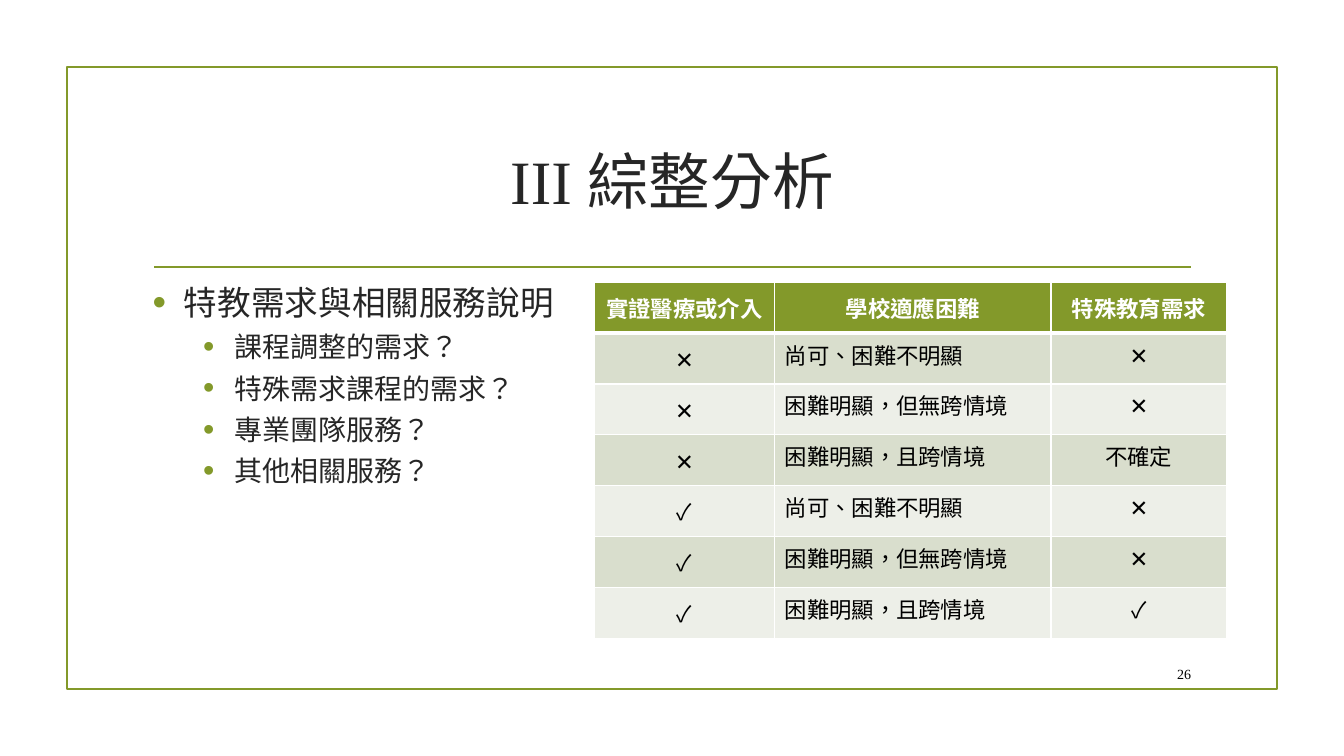
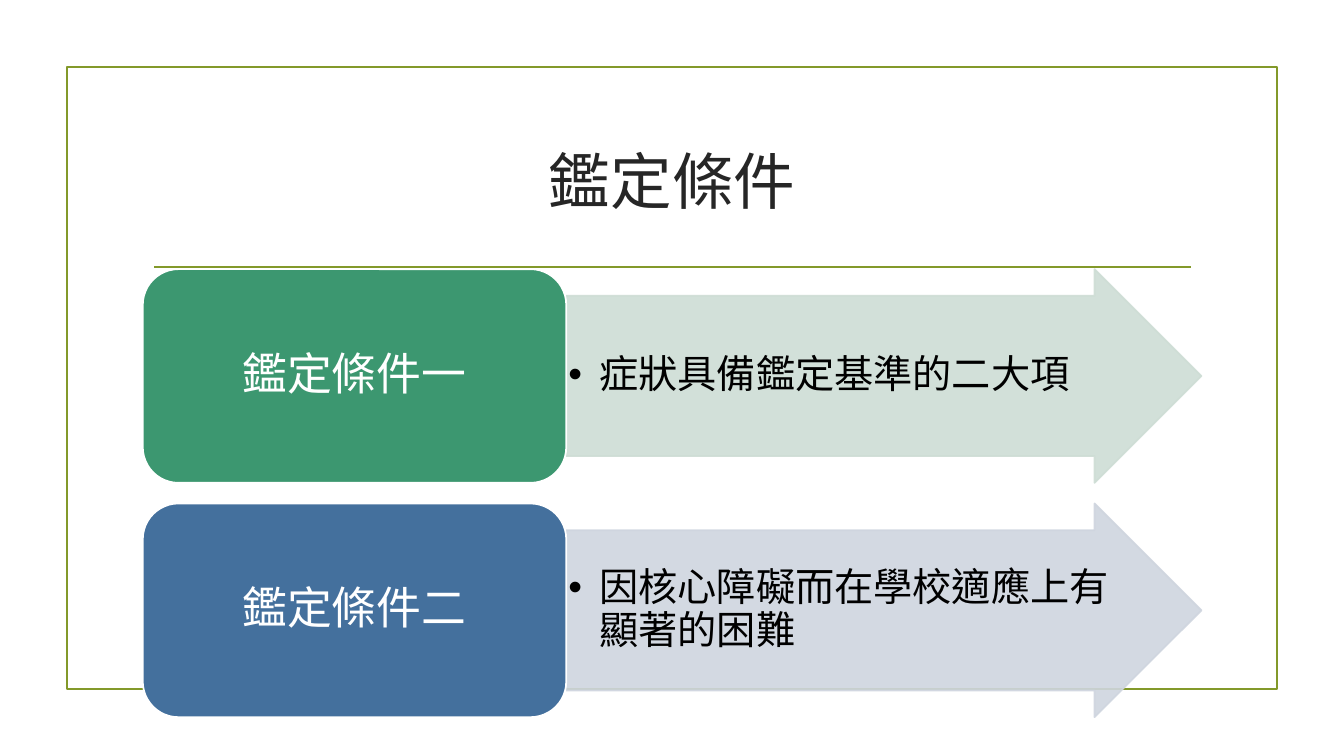
from dataclasses import dataclass

from lxml import etree
from pptx import Presentation, util as u
from pptx.dml.color import RGBColor
from pptx.enum import shapes, text
from pptx.oxml import ns

# Colours and fonts
GREEN = RGBColor(0x83, 0x99, 0x2A)
INK = RGBColor(0x26, 0x26, 0x26)
BLACK = RGBColor(0, 0, 0)
WHITE = RGBColor(0xFF, 0xFF, 0xFF)
BAND_DARK = RGBColor(0xD9, 0xDE, 0xCD)
BAND_LIGHT = RGBColor(0xED, 0xEF, 0xE8)
TEAL = RGBColor(0x3C, 0x97, 0x70)
TEAL_PALE = RGBColor(0xCE, 0xDD, 0xD5)
BLUE = RGBColor(0x44, 0x70, 0x9D)
BLUE_PALE = RGBColor(0xCF, 0xD5, 0xDF)
SERIF = "Times New Roman"
SANS = "Noto Sans CJK TC"
LINE_WIDTH = 1.25
LEFT, CENTER, RIGHT = text.PP_ALIGN.LEFT, text.PP_ALIGN.CENTER, text.PP_ALIGN.RIGHT
TOP, MIDDLE = text.MSO_ANCHOR.TOP, text.MSO_ANCHOR.MIDDLE

# The slide is a grid of 160 columns by 90 rows of equal squares
SLIDE_W, SLIDE_H = u.Inches(13.33), u.Inches(7.5)
UNIT = SLIDE_H / 90


def grid(cells: float) -> int:
    return round(cells * UNIT)


@dataclass(frozen=True)
class Box:
    left: float
    top: float
    width: float
    height: float

    def emu(self) -> tuple:
        return tuple(map(grid, (self.left, self.top, self.width, self.height)))


@dataclass(frozen=True)
class Need:
    label: str
    level: int = 0


@dataclass(frozen=True)
class Condition:
    label: str
    detail: str
    fill: RGBColor
    pale: RGBColor


FRAME = Box(8, 8, 144, 74)
TITLE = Box(17, 12.84, 126, 17.16)
RULE_LEFT, RULE_RIGHT, RULE_TOP = 18.36, 141.72, 31.8
NEEDS_BOX = Box(17, 33.6, 52.5, 43.6)
PAGE_NUMBER = Box(135.84, 78.4, 7.1, 3.7)
TABLE_LEFT, TABLE_TOP, TABLE_HEIGHT = 70.7, 33.6, 42.4
TABLE_COLUMNS = (21.5, 32.9, 20.9)
CONDITION_TOP, CONDITION_HEIGHT, CONDITION_PITCH = 32.04, 25.44, 27.9
LABEL_SHARE = 0.4

NEEDS = (
    Need("特教需求與相關服務說明"),
    Need("課程調整的需求？", 1),
    Need("特殊需求課程的需求？", 1),
    Need("專業團隊服務？", 1),
    Need("其他相關服務？", 1),
)
DECISIONS = (
    ("實證醫療或介入", "學校適應困難", "特殊教育需求"),
    ("✕", "尚可、困難不明顯", "✕"),
    ("✕", "困難明顯，但無跨情境", "✕"),
    ("✕", "困難明顯，且跨情境", "不確定"),
    ("✓", "尚可、困難不明顯", "✕"),
    ("✓", "困難明顯，但無跨情境", "✕"),
    ("✓", "困難明顯，且跨情境", "✓"),
)
CONDITIONS = (
    Condition("鑑定條件一", "症狀具備鑑定基準的二大項", TEAL, TEAL_PALE),
    Condition("鑑定條件二", "因核心障礙而在學校適應上有顯著的困難", BLUE, BLUE_PALE),
)


# Text
def add_bullet(paragraph, indent: float, color: RGBColor, size: int) -> None:
    props = paragraph._p.get_or_add_pPr()
    props.set("marL", str(u.Inches(indent)))
    props.set("indent", str(-u.Inches(0.31)))
    holder = etree.SubElement(props, ns.qn("a:buClr"))
    etree.SubElement(holder, ns.qn("a:srgbClr"), val=str(color))
    etree.SubElement(props, ns.qn("a:buSzPct"), val=str(size * 1000))
    etree.SubElement(props, ns.qn("a:buFont"), typeface="Arial")
    etree.SubElement(props, ns.qn("a:buChar"), char="•")


def write(paragraph, content: str, *, size: float, color: RGBColor, font: str = SANS,
          bold: bool = False, align=LEFT, spacing: float = 1, after: float = 0,
          indent: float = 0, bullet_color: RGBColor = BLACK, bullet_size: int = 100) -> None:
    paragraph.alignment = align
    paragraph.line_spacing = spacing
    paragraph.space_before = u.Pt(0)
    paragraph.space_after = u.Pt(after)
    if indent:
        add_bullet(paragraph, indent, bullet_color, bullet_size)
    run = paragraph.add_run()
    run.text = content
    run.font.name = font
    run.font.size = u.Pt(size)
    run.font.bold = bold
    run.font.color.rgb = color
    props = run._r.get_or_add_rPr()
    props.set("lang", "zh-TW")
    east_asian = etree.Element(ns.qn("a:ea"), typeface=SANS)
    props.find(ns.qn("a:latin")).addnext(east_asian)


def set_frame(frame, anchor, across: float = 0.1, down: float = 0.05) -> None:
    frame.word_wrap = True
    frame.vertical_anchor = anchor
    frame.margin_left = frame.margin_right = u.Inches(across)
    frame.margin_top = frame.margin_bottom = u.Inches(down)


def add_text(slide, box: Box, content: str, **style) -> None:
    frame = slide.shapes.add_textbox(*box.emu()).text_frame
    set_frame(frame, MIDDLE)
    write(frame.paragraphs[0], content, **style)


# Shapes
def add_shape(slide, kind, box: Box, line: RGBColor, fill: RGBColor | None = None):
    shape = slide.shapes.add_shape(kind, *box.emu())
    shape.shadow.inherit = False
    if fill is None:
        shape.fill.background()
    else:
        shape.fill.solid()
        shape.fill.fore_color.rgb = fill
    shape.line.color.rgb = line
    shape.line.width = u.Pt(LINE_WIDTH)
    return shape


def add_slide(deck, title: str):
    """Blank slide with the shared frame, rule and title."""
    slide = deck.slides.add_slide(deck.slide_layouts[6])
    add_shape(slide, shapes.MSO_SHAPE.RECTANGLE, FRAME, GREEN)
    rule = slide.shapes.add_connector(
        shapes.MSO_CONNECTOR.STRAIGHT, grid(RULE_LEFT), grid(RULE_TOP),
        grid(RULE_RIGHT), grid(RULE_TOP))
    rule.line.color.rgb = GREEN
    rule.line.width = u.Pt(LINE_WIDTH)
    etree.SubElement(rule._element.spPr, ns.qn("a:effectLst"))
    add_text(slide, TITLE, title, size=44, color=INK, font=SERIF, align=CENTER)
    return slide


# Needs list and decision table
def add_needs(slide) -> None:
    frame = slide.shapes.add_textbox(*NEEDS_BOX.emu()).text_frame
    set_frame(frame, TOP, down=0)
    for index, need in enumerate(NEEDS):
        paragraph = frame.add_paragraph() if index else frame.paragraphs[0]
        paragraph.level = need.level
        write(paragraph, need.label, size=24 - 4 * need.level, color=INK, after=5.3,
              indent=0.31 + 0.5 * need.level, bullet_color=GREEN, bullet_size=115)


def add_borders(cell, top: float, bottom: float) -> None:
    props = cell._tc.get_or_add_tcPr()
    for side, width in (("L", 1), ("R", 1), ("T", top), ("B", bottom)):
        border = etree.SubElement(props, ns.qn(f"a:ln{side}"), w=str(u.Pt(width)))
        fill = etree.SubElement(border, ns.qn("a:solidFill"))
        etree.SubElement(fill, ns.qn("a:srgbClr"), val=str(WHITE))


def add_decisions(slide) -> None:
    box = Box(TABLE_LEFT, TABLE_TOP, sum(TABLE_COLUMNS), TABLE_HEIGHT)
    table = slide.shapes.add_table(len(DECISIONS), len(TABLE_COLUMNS), *box.emu()).table
    for column, width in zip(table.columns, TABLE_COLUMNS):
        column.width = grid(width)
    for r, values in enumerate(DECISIONS):
        table.rows[r].height = grid(TABLE_HEIGHT / len(DECISIONS))
        header = r == 0
        band = GREEN if header else (BAND_LIGHT, BAND_DARK)[r % 2]
        for c, value in enumerate(values):
            cell = table.cell(r, c)
            add_borders(cell, top=3 if r == 1 else 1, bottom=3 if header else 1)
            cell.fill.solid()
            cell.fill.fore_color.rgb = band
            cell.vertical_anchor = MIDDLE if header or c == 0 else TOP
            write(cell.text_frame.paragraphs[0], value, size=16, bold=header,
                  color=WHITE if header else BLACK,
                  align=LEFT if c == 1 and not header else CENTER)


# Condition label with its arrow
def add_condition(slide, condition: Condition, top: float) -> None:
    label_width = TITLE.width * LABEL_SHARE
    arrow_box = Box(TITLE.left + label_width, top, TITLE.width - label_width, CONDITION_HEIGHT)
    arrow = add_shape(slide, shapes.MSO_SHAPE.RIGHT_ARROW, arrow_box,
                      condition.pale, condition.pale)
    arrow.adjustments[0], arrow.adjustments[1] = 0.75, 0.5
    for color in arrow._element.spPr.iter(ns.qn("a:srgbClr")):
        etree.SubElement(color, ns.qn("a:alpha"), val="90000")
    set_frame(arrow.text_frame, MIDDLE, 0.02, 0.02)
    write(arrow.text_frame.paragraphs[0], condition.detail, size=28, color=BLACK,
          spacing=0.9, indent=0.31)

    label_box = Box(TITLE.left, top, label_width, CONDITION_HEIGHT)
    label = add_shape(slide, shapes.MSO_SHAPE.ROUNDED_RECTANGLE, label_box,
                      WHITE, condition.fill)
    set_frame(label.text_frame, MIDDLE, 0.13, 0.07)
    write(label.text_frame.paragraphs[0], condition.label, size=32, color=WHITE,
          font=SERIF, align=CENTER, spacing=0.9)


def main() -> None:
    deck = Presentation()
    deck.slide_width, deck.slide_height = SLIDE_W, SLIDE_H

    # Overall analysis
    analysis = add_slide(deck, "III 綜整分析")
    add_needs(analysis)
    add_text(analysis, PAGE_NUMBER, "26", size=10, color=BLACK, font=SERIF, align=RIGHT)
    add_decisions(analysis)

    # Identification conditions
    identification = add_slide(deck, "鑑定條件")
    for index, condition in enumerate(CONDITIONS):
        add_condition(identification, condition, CONDITION_TOP + index * CONDITION_PITCH)

    deck.save("out.pptx")


if __name__ == "__main__":
    main()
